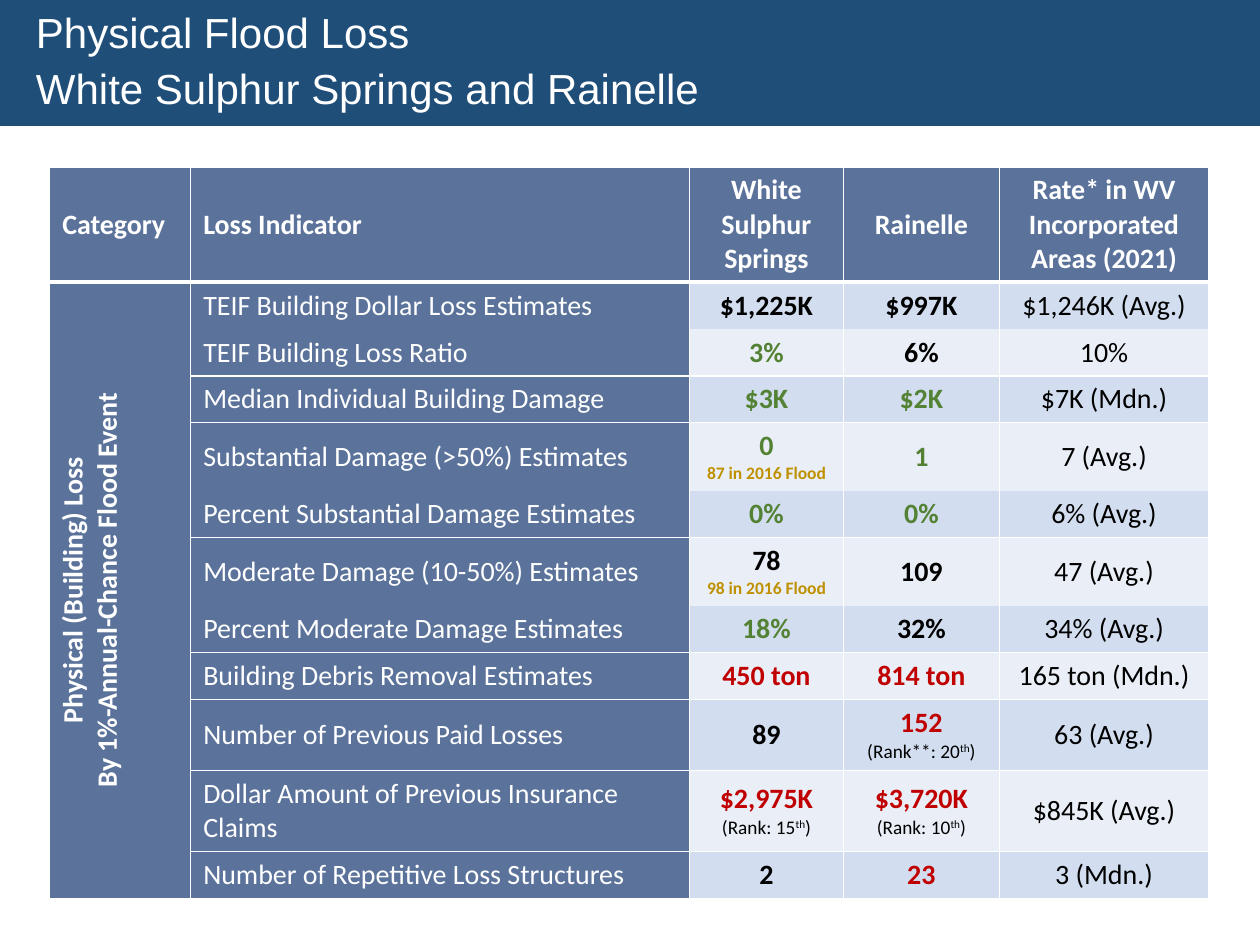
from lxml.etree import SubElement as Sub
from pptx import Presentation
from pptx.dml.color import RGBColor
from pptx.enum.shapes import MSO_SHAPE as Shape
from pptx.enum.text import MSO_ANCHOR as Anchor, PP_ALIGN as Align
from pptx.oxml.ns import qn
from pptx.util import Pt

WHITE = RGBColor(0xFF, 0xFF, 0xFF)
BLACK = RGBColor(0, 0, 0)
NAVY = RGBColor(0x1F, 0x4E, 0x79)
SLATE = RGBColor(0x5B, 0x73, 0x9B)
GREEN = RGBColor(0x54, 0x82, 0x35)
RED = RGBColor(0xC0, 0, 0)
GOLD = RGBColor(0xBF, 0x90, 0)
BANDS = [RGBColor(0xD2, 0xDE, 0xEF), RGBColor(0xEA, 0xEF, 0xF7)]

TITLE = ["Physical Flood Loss", "White Sulphur Springs and Rainelle"]
HEADS = ["Category", "Loss Indicator", "White Sulphur Springs", "Rainelle",
         "Rate* in WV Incorporated Areas (2021)"]
GROUP = ["Physical (Building) Loss", "By 1%-Annual-Chance Flood Event"]
ROWS = [
    ("TEIF Building Dollar Loss Estimates",
     ("$1,225K", BLACK), ("$997K", BLACK), "$1,246K (Avg.)"),
    ("TEIF Building Loss Ratio", ("3%", GREEN), ("6%", BLACK), "10%"),
    ("Median Individual Building Damage",
     ("$3K", GREEN), ("$2K", GREEN), "$7K (Mdn.)"),
    ("Substantial Damage (>50%) Estimates",
     ("0", GREEN, "87 in 2016 Flood"), ("1", GREEN), "7 (Avg.)"),
    ("Percent Substantial Damage Estimates",
     ("0%", GREEN), ("0%", GREEN), "6% (Avg.)"),
    ("Moderate Damage (10-50%) Estimates",
     ("78", BLACK, "98 in 2016 Flood"), ("109", BLACK), "47 (Avg.)"),
    ("Percent Moderate Damage Estimates",
     ("18%", GREEN), ("32%", BLACK), "34% (Avg.)"),
    ("Building Debris Removal Estimates",
     ("450 ton", RED), ("814 ton", RED), "165 ton (Mdn.)"),
    ("Number of Previous Paid Losses",
     ("89", BLACK), ("152", RED, "(Rank**: 20", "th", ")"), "63 (Avg.)"),
    ("Dollar Amount of Previous Insurance Claims",
     ("$2,975K", RED, "(Rank: 15", "th", ")"),
     ("$3,720K", RED, "(Rank: 10", "th", ")"), "$845K (Avg.)"),
    ("Number of Repetitive Loss Structures",
     ("2", BLACK), ("23", RED), "3 (Mdn.)"),
]
JOINED = [1, 4, 6]
WIDTHS = [80.6, 285.1, 87.8, 89.3, 119.5]
HEIGHTS = [65.8, 26.7, 26.7, 26.7, 38.8, 26.7, 38.8, 26.7, 26.7, 40.4, 46.4, 26.7]


def write(par, text, size=16, color=WHITE, bold=False, font="Calibri",
          align=Align.LEFT, base=0):
    par.alignment = align
    run = par.add_run()
    run.text = text
    run.font.name, run.font.size, run.font.bold = font, Pt(size), bold
    run.font.color.rgb = color
    if base:
        run._r.get_or_add_rPr().set("baseline", str(base))


def lines(frame, count):
    return [frame.paragraphs[0]] + [frame.add_paragraph() for _ in range(count - 1)]


def edge(props, side, width, spot):
    line = Sub(props, qn("a:ln" + side), w=str(Pt(width)))
    if width:
        fill = Sub(line, qn("a:solidFill"))
        Sub(fill, qn("a:srgbClr"), val=str(WHITE))
    else:
        Sub(line, qn("a:noFill"))
    props.insert(spot, line)


def style(cell, fill, top=1, bottom=1):
    cell.fill.solid()
    cell.fill.fore_color.rgb = fill
    cell.vertical_anchor = Anchor.MIDDLE
    props = cell._tc.get_or_add_tcPr()
    for spot, (side, width) in enumerate(zip("LRTB", (1, 1, top, bottom))):
        edge(props, side, width, spot)


def value(cell, text, color, note=None, sup=None, end=None):
    pars = lines(cell.text_frame, 2 if note else 1)
    mid = Align.CENTER
    write(pars[0], text, color=color, bold=True, align=mid)
    if sup:
        for part, base in ((note, 0), (sup, 30000), (end, 0)):
            write(pars[1], part, size=11, color=BLACK, align=mid, base=base)
    elif note:
        write(pars[1], note, size=10, color=GOLD, bold=True, align=mid)


def banner(slide):
    bar = slide.shapes.add_shape(Shape.RECTANGLE, Pt(0), Pt(0), Pt(720), Pt(72))
    bar.shadow.inherit = False
    bar.fill.solid()
    bar.fill.fore_color.rgb = NAVY
    bar.line.fill.background()
    frame = bar.text_frame
    frame.word_wrap = True
    frame.vertical_anchor = Anchor.MIDDLE
    for num, (par, text) in enumerate(zip(lines(frame, len(TITLE)), TITLE)):
        write(par, text, size=24, font="Arial")
        par.line_spacing = 0.9
        par.space_before = Pt(6 * num)
        par._p.get_or_add_pPr().set("marL", str(Pt(13.5)))


def losses(slide):
    table = slide.shapes.add_table(
        len(HEIGHTS), len(WIDTHS), Pt(28.4), Pt(95.3),
        Pt(sum(WIDTHS)), Pt(sum(HEIGHTS))).table
    table.first_row = table.horz_banding = False
    for col, width in zip(table.columns, WIDTHS):
        col.width = Pt(width)
    for row, height in zip(table.rows, HEIGHTS):
        row.height = Pt(height)

    for col, text in enumerate(HEADS):
        cell = table.cell(0, col)
        style(cell, SLATE, bottom=3)
        write(cell.text_frame.paragraphs[0], text, bold=True,
              align=Align.CENTER if col > 1 else Align.LEFT)

    group = table.cell(1, 0)
    group.merge(table.cell(len(ROWS), 0))
    style(group, SLATE, top=3)
    group._tc.get_or_add_tcPr().set("vert", "vert270")
    for par, text in zip(lines(group.text_frame, len(GROUP)), GROUP):
        write(par, text, bold=True, align=Align.CENTER)

    for row, (name, spring, rain, rate) in enumerate(ROWS, 1):
        top = 3 if row == 1 else 0 if row - 1 in JOINED else 1
        bottom = 0 if row in JOINED else 1
        cells = [table.cell(row, col) for col in range(1, len(WIDTHS))]
        for col, cell in enumerate(cells):
            style(cell, BANDS[(row - 1) % 2] if col else SLATE, top, bottom)
        write(cells[0].text_frame.paragraphs[0], name)
        value(cells[1], *spring)
        value(cells[2], *rain)
        write(cells[3].text_frame.paragraphs[0], rate, color=BLACK,
              align=Align.CENTER)


def main():
    deck = Presentation()
    deck.slide_width, deck.slide_height = Pt(720), Pt(540)
    slide = deck.slides.add_slide(deck.slide_layouts[6])
    banner(slide)
    losses(slide)
    deck.save("out.pptx")


if __name__ == "__main__":
    main()
